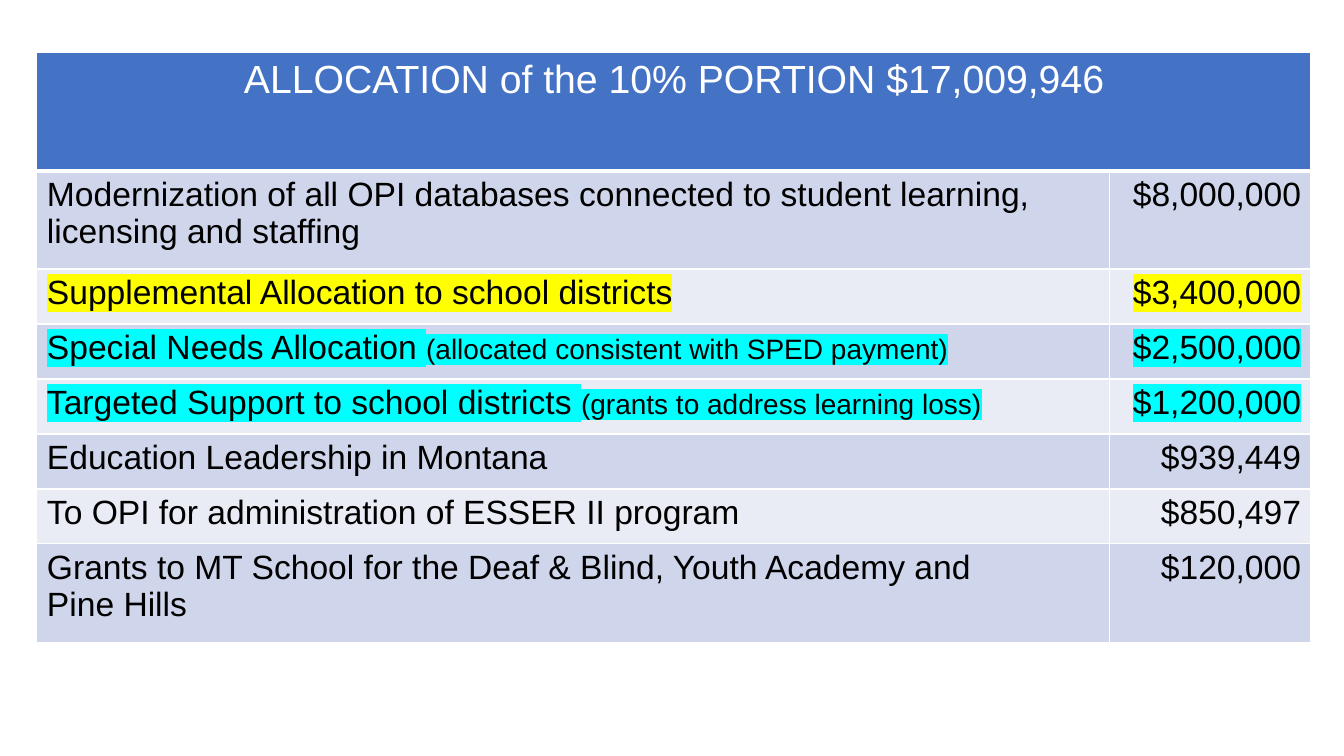
from dataclasses import dataclass

from lxml import etree
from pptx import Presentation
from pptx import util as u
from pptx.dml import color
from pptx.enum import text
from pptx.oxml import ns

FONT = "Arial"
WHITE, BLACK, HEADER_BLUE = "FFFFFF", "000000", "4472C4"
BANDS = ("CFD5EA", "E9EBF5")
YELLOW, CYAN = "FFFF00", "00FFFF"
HEADER_HEIGHT, TALL, SHORT = 2.97, 2.48, 1.385
COLUMN_WIDTHS = (27.03, 5.08)
TABLE_LEFT, TABLE_TOP = 0.93, 1.33


@dataclass(frozen=True)
class Allocation:
    purpose: str
    amount: str
    note: str = ""
    highlight: str = ""
    height: float = SHORT


ALLOCATIONS = (
    Allocation("Modernization of all OPI databases connected to student learning, "
               "licensing and staffing", "$8,000,000", height=TALL),
    Allocation("Supplemental Allocation to school districts", "$3,400,000", highlight=YELLOW),
    Allocation("Special Needs Allocation ", "$2,500,000",
               "(allocated consistent with SPED payment)", CYAN),
    Allocation("Targeted Support to school districts ", "$1,200,000",
               "(grants to address learning loss)", CYAN),
    Allocation("Education Leadership in Montana", "$939,449"),
    Allocation("To OPI for administration of ESSER II program", "$850,497"),
    Allocation("Grants to MT School for the Deaf & Blind, Youth Academy and\nPine Hills",
               "$120,000", height=TALL),
)


def set_color(target, hex_color: str) -> None:
    """Give a solid colour to a fill format."""
    target.solid()
    target.fore_color.rgb = color.RGBColor.from_string(hex_color)


def add_hex_child(parent, tag: str, hex_color: str):
    child = etree.SubElement(parent, ns.qn(tag))
    etree.SubElement(child, ns.qn("a:srgbClr"), val=hex_color)
    return child


def set_borders(cell, bottom_points: float) -> None:
    """Draw white lines on all four sides; they must precede the cell fill."""
    properties = cell._tc.get_or_add_tcPr()
    widths = {"L": 1, "R": 1, "T": 1, "B": bottom_points}
    for index, (side, points) in enumerate(widths.items()):
        line = etree.Element(ns.qn(f"a:ln{side}"), w=str(u.Pt(points)))
        add_hex_child(line, "a:solidFill", WHITE)
        properties.insert(index, line)


def format_span(span, points: float, hex_color: str, highlight: str = "") -> None:
    span.font.name = FONT
    span.font.size = u.Pt(points)
    span.font.bold = False
    set_color(span.font.fill, hex_color)
    if highlight:
        properties = span._r.get_or_add_rPr()
        marker = add_hex_child(properties, "a:highlight", highlight)
        properties.find(ns.qn("a:solidFill")).addnext(marker)


def fill_cell(cell, words: str, fill: str, align: text.PP_ALIGN, points: float = 24,
              hex_color: str = BLACK, note: str = "", highlight: str = "",
              bottom_points: float = 1) -> None:
    set_color(cell.fill, fill)
    set_borders(cell, bottom_points)
    cell.text_frame.text = words
    for para in cell.text_frame.paragraphs:
        para.alignment = align
        for span in para.runs:
            format_span(span, points, hex_color, highlight)
    if note:
        span = cell.text_frame.paragraphs[-1].add_run()
        span.text = note
        format_span(span, 20, hex_color, highlight)


def add_allocation_table(page) -> None:
    heights = [HEADER_HEIGHT] + [item.height for item in ALLOCATIONS]
    table = page.shapes.add_table(
        len(heights), len(COLUMN_WIDTHS), u.Cm(TABLE_LEFT), u.Cm(TABLE_TOP),
        u.Cm(sum(COLUMN_WIDTHS)), u.Cm(sum(heights))).table
    table.first_row = table.horz_banding = False
    for column, width in zip(table.columns, COLUMN_WIDTHS):
        column.width = u.Cm(width)
    for row, height in zip(table.rows, heights):
        row.height = u.Cm(height)

    header = table.cell(0, 0)
    header.merge(table.cell(0, 1))
    fill_cell(header, "ALLOCATION of the 10% PORTION $17,009,946", HEADER_BLUE,
              text.PP_ALIGN.CENTER, 28, WHITE, bottom_points=3)
    for index, item in enumerate(ALLOCATIONS):
        band = BANDS[index % 2]
        fill_cell(table.cell(index + 1, 0), item.purpose, band, text.PP_ALIGN.LEFT,
                  note=item.note, highlight=item.highlight)
        fill_cell(table.cell(index + 1, 1), item.amount, band, text.PP_ALIGN.RIGHT,
                  highlight=item.highlight)


def main() -> None:
    deck = Presentation()
    deck.slide_width, deck.slide_height = u.Cm(33.87), u.Cm(19.05)
    page = deck.slides.add_slide(deck.slide_layouts[6])
    add_allocation_table(page)
    deck.save("out.pptx")


if __name__ == "__main__":
    main()
